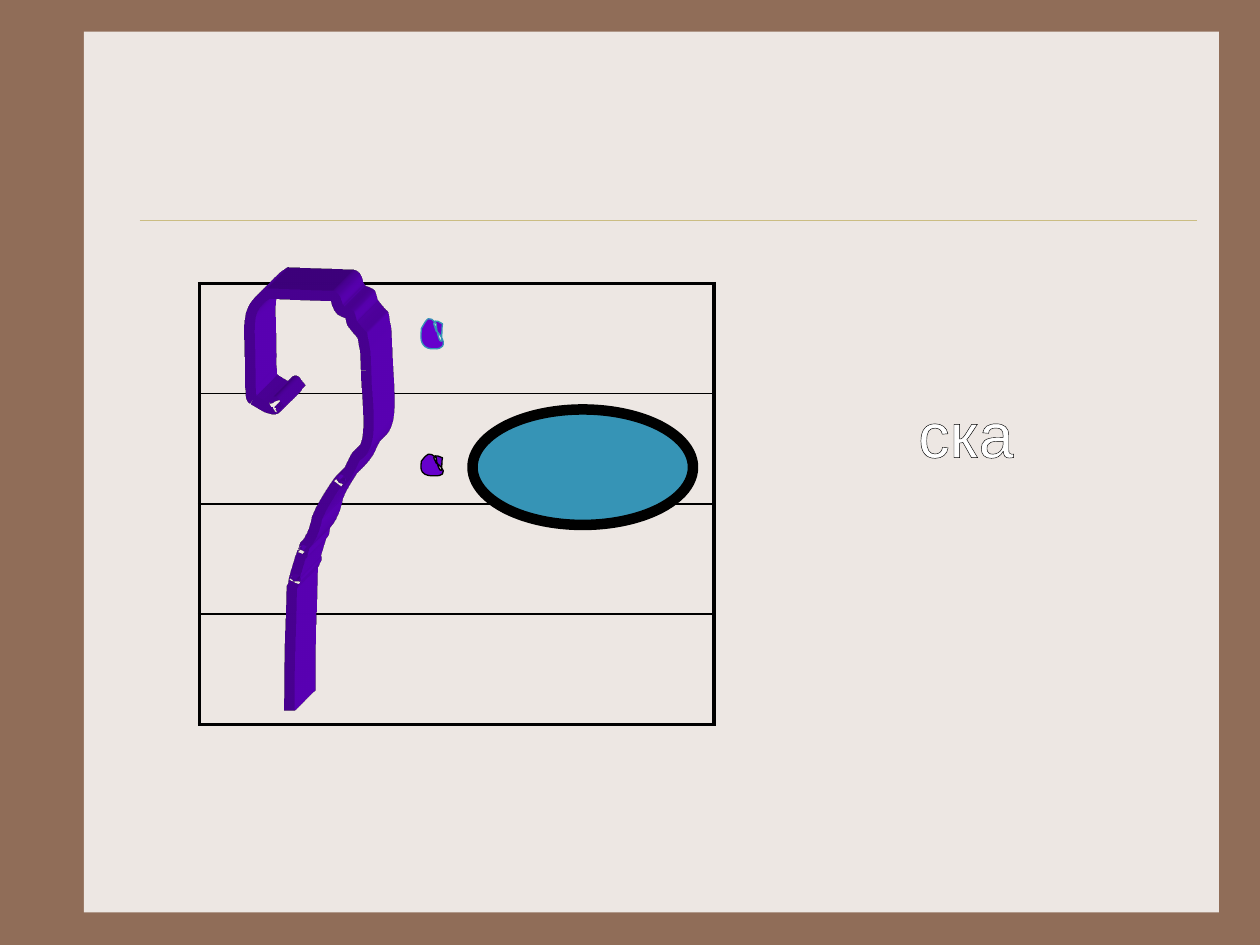
import pptx
import pptx.dml.color
import pptx.enum.shapes
import pptx.enum.text
import pptx.oxml
import pptx.oxml.ns
import pptx.util

RGB = pptx.dml.color.RGBColor
BROWN, CREAM, SAND = RGB(0x90, 0x6D, 0x58), RGB(0xED, 0xE7, 0xE3), RGB(0xCB, 0xBD, 0x83)
BLACK, WHITE = RGB(0, 0, 0), RGB(255, 255, 255)
TEAL, PURPLE = RGB(0x36, 0x94, 0xB6), RGB(0x66, 0, 0xCC)
UNIT = pptx.util.Inches(1) / 12
NAMESPACE = pptx.oxml.ns.nsdecls("a")

DROP_SIZE = (21, 28)
DROP_POINTS = [
    (13, 7), (7, 0), (6, 2), (1, 11), (1, 15), (0, 20), (2, 23), (4, 27), (9, 27), (9, 27),
    (12, 27), (15, 28), (18, 25), (21, 21), (14, 13), (13, 13), (13, 11), (11, 9), (11, 7),
    (12, 2), (17, 7), (18, 7), (17, 12), (18, 17), (17, 21), (16, 23), (13, 13), (13, 7)]
HOOK_SIZE = (107, 331)
HOOK_POINTS = [
    (31, 92), (16, 73), (44, 106), (9, 84), (7, 83), (8, 77), (7, 74),
    (8, 27), (0, 13), (21, 0), (38, 1), (55, 1), (72, 2), (76, 3), (75, 9), (78, 12),
    (78, 14), (86, 16), (86, 17), (87, 19), (87, 23), (89, 25), (91, 28), (96, 33), (96, 33),
    (99, 50), (98, 41), (99, 61), (99, 85), (107, 122), (91, 129), (88, 134), (85, 143),
    (81, 147), (72, 158), (84, 139), (74, 153), (69, 161), (64, 168), (60, 178),
    (58, 188), (55, 195), (50, 200), (46, 219), (53, 189), (45, 215),
    (36, 244), (48, 215), (40, 233), (39, 273), (38, 282), (38, 331)]


def grid(*cells):
    """Turn twelfths of an inch into lengths."""
    return [pptx.util.Emu(round(cell * UNIT)) for cell in cells]


def style(shape, fill, line, width=0):
    """Give a shape its fill and line, without a shadow."""
    shape.shadow.inherit = False
    if fill is None:
        shape.fill.background()
    else:
        shape.fill.solid()
        shape.fill.fore_color.rgb = fill
    if line is None:
        shape.line.fill.background()
    else:
        shape.line.color.rgb = line
        shape.line.width = pptx.util.Pt(width)


def add_curve(slide, points, size, box, close):
    """Build a Bezier outline from a start point and triples of control points."""
    left, top, width, height = grid(*box)
    start, *rest = [(left + x / size[0] * width, top + y / size[1] * height)
                    for x, y in points]
    builder = slide.shapes.build_freeform(*start, scale=1.0)
    builder.add_line_segments(rest, close=close)
    shape = builder.convert_to_shape()
    segments = shape._element.xpath(".//a:lnTo")
    for index in range(0, len(segments), 3):
        curve = pptx.oxml.parse_xml(f"<a:cubicBezTo {NAMESPACE}/>")
        segments[index].addprevious(curve)
        for segment in segments[index:index + 3]:
            curve.append(segment[0])
            segment.getparent().remove(segment)
    return shape


def draw_frame(slide, box):
    """Draw the brown border, the cream panel and its title rule."""
    slide.background.fill.solid()
    slide.background.fill.fore_color.rgb = BROWN
    rectangle = pptx.enum.shapes.MSO_SHAPE.RECTANGLE
    style(slide.shapes.add_shape(rectangle, *grid(*box)), CREAM, None)
    left, top, width, _ = box
    ends = grid(left + 5.3, top + 18, left + width - 2.1, top + 18)
    rule = slide.shapes.add_connector(pptx.enum.shapes.MSO_CONNECTOR.STRAIGHT, *ends)
    rule.line.color.rgb = SAND
    rule.line.width = pptx.util.Pt(0.25)
    rule._element.spPr.append(pptx.oxml.parse_xml(f"<a:effectLst {NAMESPACE}/>"))


def draw_ladder(slide, box, rows=4):
    """Draw the empty ruled table with a heavy outer border."""
    table = slide.shapes.add_table(rows, 1, *grid(*box)).table
    table.first_row = table.horz_banding = False
    for index in range(rows):
        cell = table.cell(index, 0)
        widths = {"L": 2.25, "R": 2.25, "T": 1 if index else 2.25,
                  "B": 2.25 if index == rows - 1 else 1}
        properties = cell._tc.get_or_add_tcPr()
        for side, width in widths.items():
            properties.append(pptx.oxml.parse_xml(
                f'<a:ln{side} {NAMESPACE} w="{pptx.util.Pt(width)}">'
                f'<a:solidFill><a:srgbClr val="{BLACK}"/></a:solidFill></a:ln{side}>'))
        cell.fill.background()


def draw_oval(slide, box):
    """Draw the heavy teal oval."""
    oval = pptx.enum.shapes.MSO_SHAPE.OVAL
    style(slide.shapes.add_shape(oval, *grid(*box)), TEAL, BLACK, 6)


def draw_syllable(slide, box):
    """Write the outlined syllable."""
    frame = slide.shapes.add_textbox(*grid(*box)).text_frame
    frame.word_wrap = False
    frame.text = "ска"
    paragraph = frame.paragraphs[0]
    paragraph.alignment = pptx.enum.text.PP_ALIGN.CENTER
    run = paragraph.runs[0]
    run.font.size = pptx.util.Pt(36)
    run.font.name = "Arial"
    run.font.color.rgb = WHITE
    run._r.get_or_add_rPr().insert(0, pptx.oxml.parse_xml(
        f'<a:ln {NAMESPACE} w="{pptx.util.Pt(0.75)}">'
        f'<a:solidFill><a:srgbClr val="{BLACK}"/></a:solidFill></a:ln>'))


def draw_drop(slide, box, line):
    """Draw one small purple drop."""
    style(add_curve(slide, DROP_POINTS, DROP_SIZE, box, True), PURPLE, line, 0.75)


def draw_hook(slide, box):
    """Draw the hooked stroke, extruded towards the upper right."""
    hook = add_curve(slide, HOOK_POINTS, HOOK_SIZE, box, False)
    style(hook, None, PURPLE, 6)
    properties = hook._element.spPr
    properties.append(pptx.oxml.parse_xml(
        f'<a:scene3d {NAMESPACE}><a:camera prst="legacyObliqueTopRight"/>'
        '<a:lightRig rig="legacyFlat3" dir="b"/></a:scene3d>'))
    properties.append(pptx.oxml.parse_xml(
        f'<a:sp3d {NAMESPACE} extrusionH="430200" prstMaterial="legacyMatte">'
        '<a:bevelT w="13500" h="13500" prst="angle"/>'
        '<a:bevelB w="13500" h="13500" prst="angle"/>'
        f'<a:extrusionClr><a:srgbClr val="{PURPLE}"/></a:extrusionClr></a:sp3d>'))


def main():
    """Build the slide and save it."""
    deck = pptx.Presentation()
    deck.slide_width, deck.slide_height = grid(120, 90)
    slide = deck.slides.add_slide(deck.slide_layouts[6])
    draw_frame(slide, (8, 3, 108.1, 83.9))
    draw_ladder(slide, (19, 27, 49, 42))
    draw_oval(slide, (45, 39, 21, 11))
    draw_syllable(slide, (73, 37, 38, 26))
    draw_drop(slide, (40, 30, 2.5, 3.33), TEAL)
    draw_drop(slide, (40, 43, 2.5, 2.4), BLACK)
    draw_hook(slide, (23, 28, 12.84, 39.7))
    deck.save("out.pptx")


if __name__ == "__main__":
    main()
